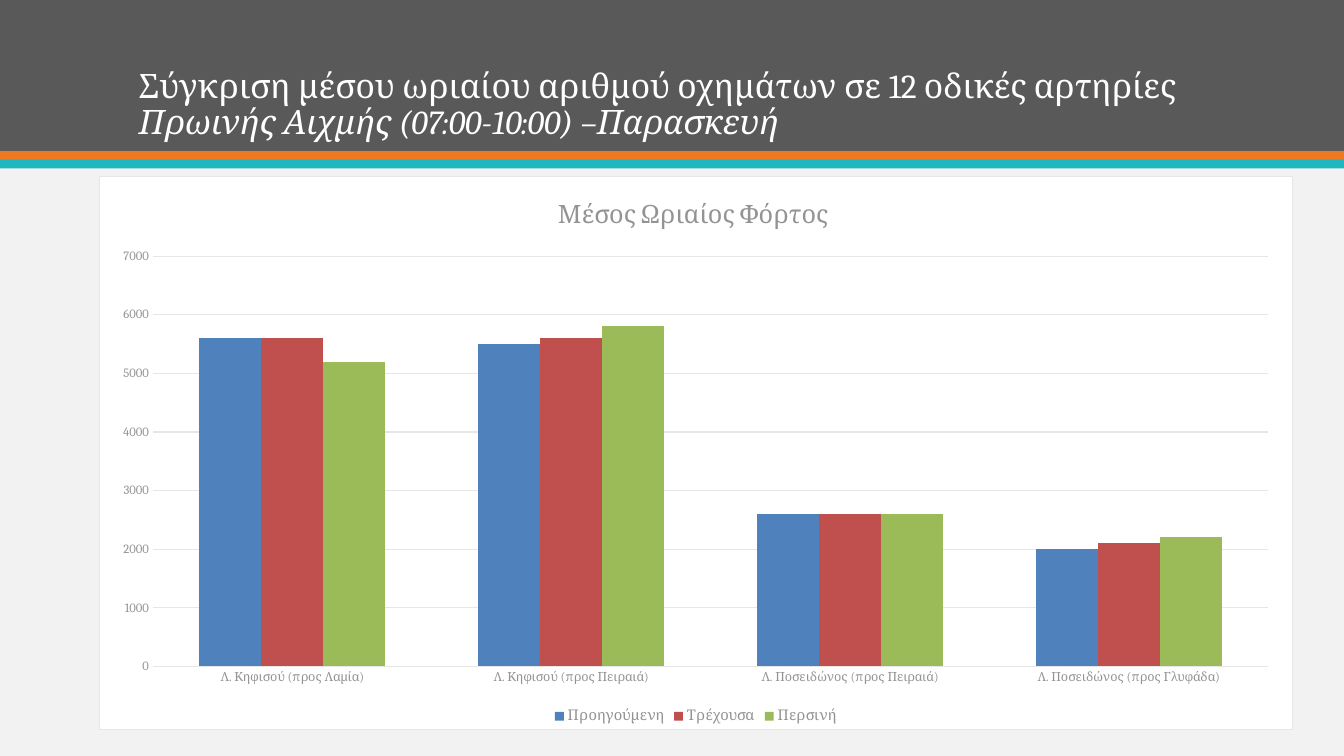
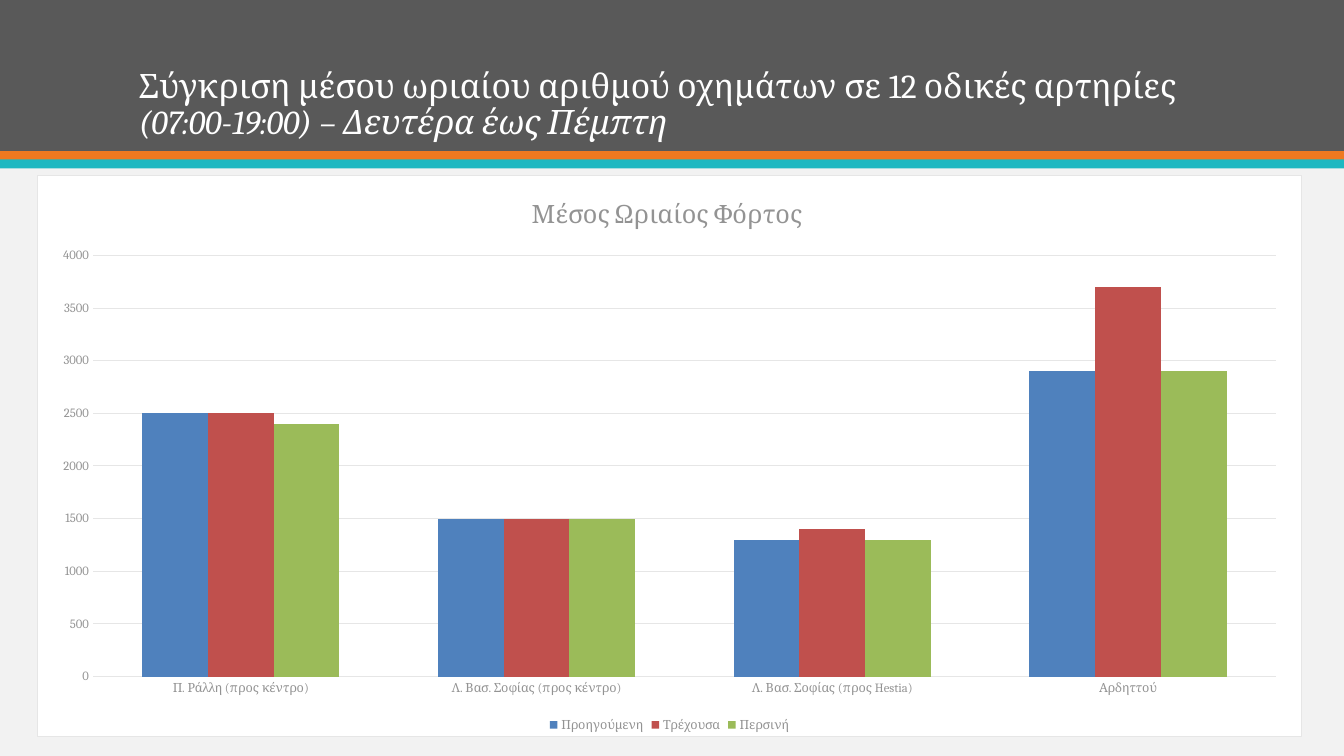
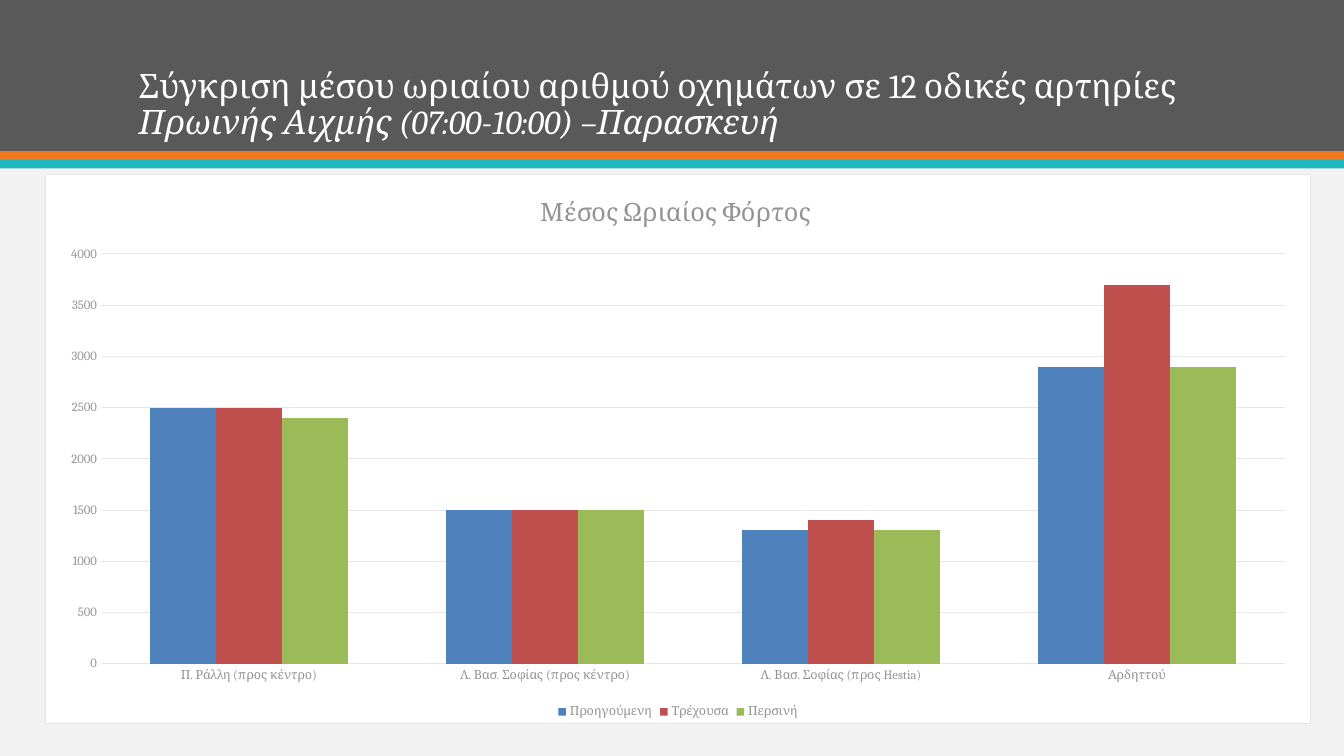
from lxml import etree
from pptx import Presentation
from pptx import util as u
from pptx.chart import data as chart_data
from pptx.dml.color import RGBColor
from pptx.enum import chart as ch, shapes, text
from pptx.oxml import parse_xml

PAPER = RGBColor(0xF2, 0xF2, 0xF2)
CHARCOAL = RGBColor(0x59, 0x59, 0x59)
ORANGE = RGBColor(0xEF, 0x79, 0x20)
TEAL = RGBColor(0x1E, 0xB8, 0xC1)
WHITE = RGBColor(0xFF, 0xFF, 0xFF)
LABEL_GREY = RGBColor(0x93, 0x93, 0x93)
GRID_GREY = RGBColor(0xE6, 0xE6, 0xE6)
BLUE = RGBColor(0x4F, 0x81, 0xBD)
RED = RGBColor(0xC0, 0x50, 0x4D)
GREEN = RGBColor(0x9B, 0xBB, 0x59)

FONT = "Cambria"
SLIDE_WIDTH = 13.33
BANDS = [(0, 1.5, CHARCOAL), (1.5, 0.09, ORANGE), (1.58, 0.09, TEAL)]
TITLE_BOX = (1.28, 0, 10.98, 1.46)
HEADING = "Σύγκριση μέσου ωριαίου αριθμού οχημάτων σε 12 οδικές αρτηρίες "
FRIDAY_PEAK = "Πρωινής Αιχμής (07:00-10:00) –Παρασκευή"
MONDAY_TO_THURSDAY = "(07:00-19:00) – Δευτέρα έως Πέμπτη"
CHART_TITLE = "Μέσος Ωριαίος Φόρτος "
PERIODS = [("Προηγούμενη", BLUE), ("Τρέχουσα", RED), ("Περσινή", GREEN)]

COASTAL_FLOWS = {
    "Λ. Κηφισού (προς Λαμία)": (5600, 5600, 5200),
    "Λ. Κηφισού (προς Πειραιά)": (5500, 5600, 5800),
    "Λ. Ποσειδώνος (προς Πειραιά)": (2600, 2600, 2600),
    "Λ. Ποσειδώνος (προς Γλυφάδα)": (2000, 2100, 2200),
}
CENTRE_FLOWS = {
    "Π. Ράλλη (προς κέντρο)": (2500, 2500, 2400),
    "Λ. Βασ. Σοφίας (προς κέντρο)": (1500, 1500, 1500),
    "Λ. Βασ. Σοφίας (προς Hestia)": (1300, 1400, 1300),
    "Αρδηττού": (2900, 3700, 2900),
}
SLIDES = [
    (FRIDAY_PEAK, (0.98, 1.75, 11.84, 5.49), COASTAL_FLOWS, 7000, 1000, 10.5),
    (MONDAY_TO_THURSDAY, (0.37, 1.74, 12.54, 5.57), CENTRE_FLOWS, 4000, 500, 9),
    (FRIDAY_PEAK, (0.45, 1.73, 12.55, 5.45), CENTRE_FLOWS, 4000, 500, 9),
]


def inches(box):
    return [u.Inches(length) for length in box]


def style_font(font, size, color):
    font.name = FONT
    font.size = u.Pt(size)
    font.color.rgb = color


def add_bands(slide):
    slide.background.fill.solid()
    slide.background.fill.fore_color.rgb = PAPER
    for top, height, color in BANDS:
        band = slide.shapes.add_shape(
            shapes.MSO_SHAPE.RECTANGLE, *inches((0, top, SLIDE_WIDTH, height)))
        band.shadow.inherit = False
        band.fill.solid()
        band.fill.fore_color.rgb = color
        band.line.fill.background()


def add_title(slide, box, subtitle):
    frame = slide.shapes.add_textbox(*inches(box)).text_frame
    frame.word_wrap = True
    frame.vertical_anchor = text.MSO_ANCHOR.BOTTOM
    heading = frame.paragraphs[0]
    heading.line_spacing = 0.9
    for wording, italic in ((HEADING, False), (subtitle, True)):
        run = heading.add_run()
        run.text = wording
        run.font.italic = italic
        style_font(run.font, 24, WHITE)


def frame_chart(chart):
    border = parse_xml(
        '<c:spPr xmlns:c="http://schemas.openxmlformats.org/drawingml/2006/chart"'
        ' xmlns:a="http://schemas.openxmlformats.org/drawingml/2006/main">'
        f'<a:solidFill><a:srgbClr val="{WHITE}"/></a:solidFill>'
        f'<a:ln w="{u.Pt(0.75)}"><a:solidFill><a:srgbClr val="{GRID_GREY}"/>'
        '</a:solidFill></a:ln></c:spPr>')
    plot_root = chart.element.find(etree.QName(border).text.replace("spPr", "chart"))
    plot_root.addnext(border)


def add_flow_chart(slide, box, flows, top_value, step, legend_size):
    data = chart_data.CategoryChartData()
    data.categories = list(flows)
    for (period, _), values in zip(PERIODS, zip(*flows.values())):
        data.add_series(period, values)
    chart = slide.shapes.add_chart(
        ch.XL_CHART_TYPE.COLUMN_CLUSTERED, *inches(box), data).chart
    style_font(chart.font, 10, CHARCOAL)
    frame_chart(chart)

    chart.has_title = True
    title = chart.chart_title.text_frame.paragraphs[0].add_run()
    title.text = CHART_TITLE
    title.font.bold = False
    style_font(title.font, 18, LABEL_GREY)
    chart.chart_title.include_in_layout = False

    chart.has_legend = True
    chart.legend.position = ch.XL_LEGEND_POSITION.BOTTOM
    chart.legend.include_in_layout = False
    style_font(chart.legend.font, legend_size, LABEL_GREY)

    for axis in (chart.category_axis, chart.value_axis):
        axis.major_tick_mark = ch.XL_TICK_MARK.NONE
        axis.minor_tick_mark = ch.XL_TICK_MARK.NONE
        axis.format.line.fill.background()
        style_font(axis.tick_labels.font, 9, LABEL_GREY)
    flow_axis = chart.value_axis
    flow_axis.minimum_scale = 0
    flow_axis.maximum_scale = top_value
    flow_axis.major_unit = step
    flow_axis.has_major_gridlines = True
    flow_axis.major_gridlines.format.line.color.rgb = GRID_GREY
    flow_axis.major_gridlines.format.line.width = u.Pt(0.75)

    columns = chart.plots[0]
    columns.gap_width = 150
    columns.overlap = 0
    columns.vary_by_categories = False
    for series, (_, color) in zip(columns.series, PERIODS):
        series.format.fill.solid()
        series.format.fill.fore_color.rgb = color


def main():
    deck = Presentation()
    deck.slide_width = u.Inches(SLIDE_WIDTH)
    deck.slide_height = u.Inches(7.5)
    for subtitle, chart_box, *chart_settings in SLIDES:
        slide = deck.slides.add_slide(deck.slide_layouts[6])
        add_bands(slide)
        add_title(slide, TITLE_BOX, subtitle)
        add_flow_chart(slide, chart_box, *chart_settings)
    deck.save("out.pptx")


if __name__ == "__main__":
    main()
